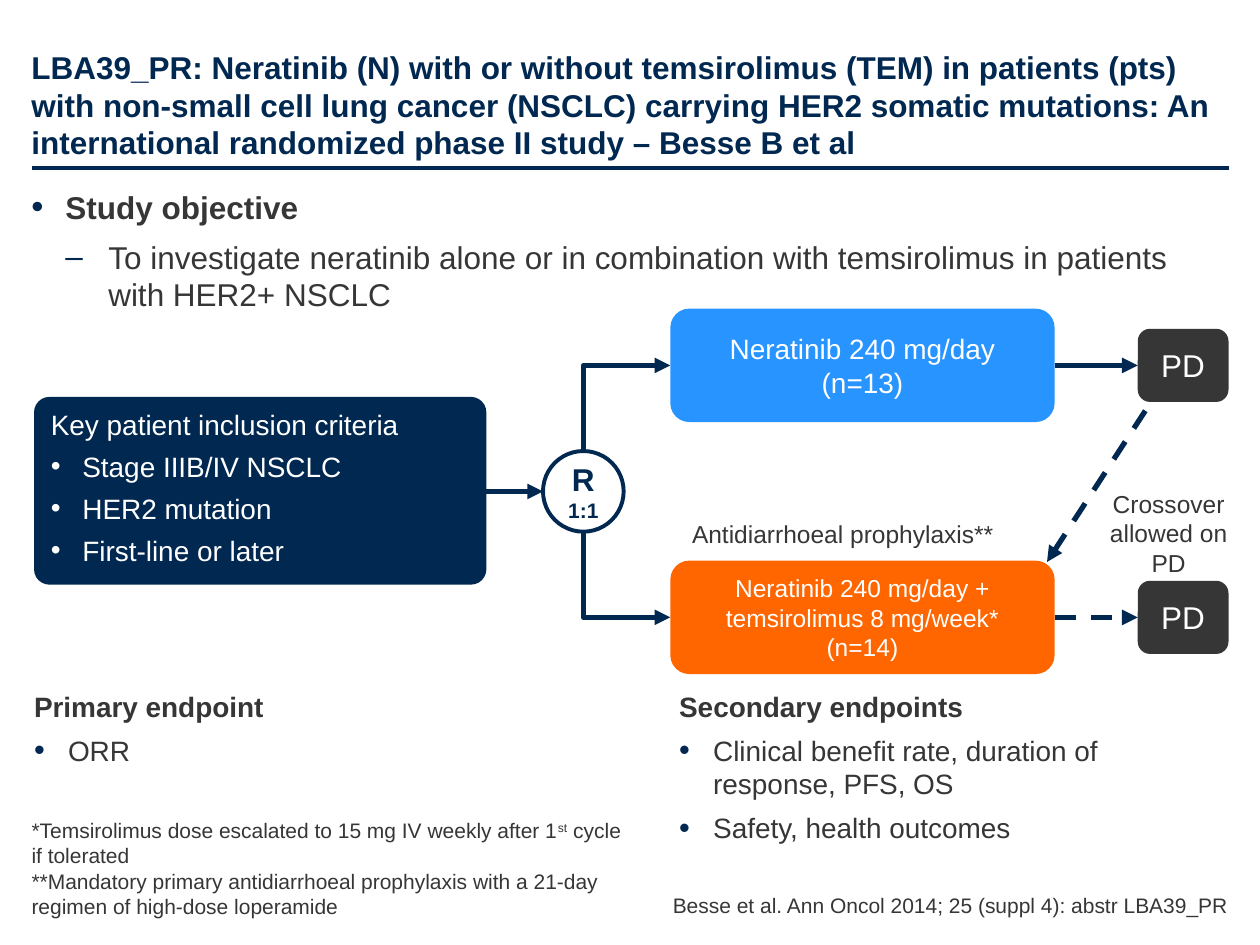
from dataclasses import dataclass

import lxml.etree
import pptx
import pptx.dml.color
import pptx.enum.dml
import pptx.enum.shapes
import pptx.enum.text
import pptx.oxml.ns
import pptx.util

Inches = pptx.util.Inches
Pt = pptx.util.Pt
qn = pptx.oxml.ns.qn
Align = pptx.enum.text.PP_ALIGN
Anchor = pptx.enum.text.MSO_ANCHOR
Shape = pptx.enum.shapes.MSO_SHAPE
Link = pptx.enum.shapes.MSO_CONNECTOR

COLORS = {"navy": "002850", "gray": "363636", "blue": "2894FF",
          "orange": "FF6600", "white": "FFFFFF"}
PAD = (0.1, 0.05, 0.1, 0.05)
FLAT = (0, 0.05, 0, 0.05)
SIDES = (0.1, 0, 0.1, 0)
NONE = (0, 0, 0, 0)


@dataclass
class Para:
    text: str
    size: float
    color: str = "gray"
    bold: bool = False
    align: Align = Align.LEFT
    after: float = 0
    before: float = 0
    bullet: str = ""
    left: float = 0.27
    hang: float = 0.27
    mark: str = "navy"
    scale: int = 100


@dataclass
class Card:
    at: tuple[float, float, float, float]
    fill: str
    paras: list[Para]
    adj: float = 0.167
    pad: tuple[float, float, float, float] = SIDES
    anchor: Anchor = Anchor.MIDDLE


@dataclass
class Arrow:
    start: tuple[float, float]
    end: tuple[float, float]
    dash: bool = False


def rgb(name: str) -> pptx.dml.color.RGBColor:
    return pptx.dml.color.RGBColor.from_string(COLORS[name])


def add_mark(par, item: Para) -> None:
    """Give a paragraph its bullet and hanging indent."""
    props = par._p.get_or_add_pPr()
    props.set("marL", str(Inches(item.left)))
    props.set("indent", str(-Inches(item.hang)))
    tint = lxml.etree.SubElement(props, qn("a:buClr"))
    lxml.etree.SubElement(tint, qn("a:srgbClr"), val=COLORS[item.mark])
    lxml.etree.SubElement(props, qn("a:buSzPct"), val=str(item.scale * 1000))
    lxml.etree.SubElement(props, qn("a:buFont"), typeface="Arial")
    lxml.etree.SubElement(props, qn("a:buChar"), char=item.bullet)


def write(shape, paras: list[Para], pad=PAD, anchor=Anchor.TOP, wrap=True) -> None:
    """Fill a shape with text; a part between carets is superscript."""
    frame = shape.text_frame
    frame.word_wrap = wrap
    frame.vertical_anchor = anchor
    (frame.margin_left, frame.margin_top,
     frame.margin_right, frame.margin_bottom) = map(Inches, pad)
    for i, item in enumerate(paras):
        par = frame.add_paragraph() if i else frame.paragraphs[0]
        par.alignment = item.align
        par.space_before = Pt(item.before)
        par.space_after = Pt(item.after)
        if item.bullet:
            add_mark(par, item)
        par.font.name = "Arial"
        par.font.size = Pt(item.size)
        par.font.bold = item.bold
        par.font.color.rgb = rgb(item.color)
        for j, part in enumerate(item.text.split("^")):
            run = par.add_run()
            run.text = part
            if j % 2:
                run.font._element.set("baseline", "30000")


def add_text(slide, at, paras: list[Para], pad=PAD, anchor=Anchor.TOP, wrap=True) -> None:
    write(slide.shapes.add_textbox(*map(Inches, at)), paras, pad, anchor, wrap)


def add_card(slide, card: Card) -> None:
    shape = slide.shapes.add_shape(Shape.ROUNDED_RECTANGLE, *map(Inches, card.at))
    shape.shadow.inherit = False
    shape.adjustments[0] = card.adj
    shape.fill.solid()
    shape.fill.fore_color.rgb = rgb(card.fill)
    shape.line.fill.background()
    write(shape, card.paras, card.pad, card.anchor)


def add_line(slide, start, end, width: float = 3, kind=Link.STRAIGHT):
    line = slide.shapes.add_connector(kind, *map(Inches, (*start, *end)))
    line.line.color.rgb = rgb("navy")
    line.line.width = Pt(width)
    lxml.etree.SubElement(line._element.spPr, qn("a:effectLst"))
    return line


def add_tip(line, end: str) -> None:
    lxml.etree.SubElement(line.line._get_or_add_ln(), qn(end), type="triangle")


def add_arrow(slide, arrow: Arrow) -> None:
    line = add_line(slide, arrow.start, arrow.end)
    if arrow.dash:
        line.line.dash_style = pptx.enum.dml.MSO_LINE.DASH
    add_tip(line, "a:tailEnd")


def add_elbow(slide, tip, base) -> None:
    """Draw one right-angle bend, level at the tip and upright at the base."""
    line = add_line(slide, tip, base, kind=Link.ELBOW)
    line._element.spPr.find(qn("a:prstGeom")).set("prst", "bentConnector2")
    add_tip(line, "a:headEnd")


def center(text: str, size: float, color: str = "white", bold: bool = False) -> Para:
    return Para(text, size, color, bold, Align.CENTER)


def add_ends(slide, at, head: str, items: list[str]) -> None:
    """Add a list of endpoints under a bold heading."""
    paras = [Para(head, 16, bold=True, after=6)]
    paras += [Para(t, 16, after=6, bullet="•", scale=110) for t in items]
    add_text(slide, at, paras, FLAT)


def main() -> None:
    deck = pptx.Presentation()
    deck.slide_width, deck.slide_height = Inches(10), Inches(7.5)
    slide = deck.slides.add_slide(deck.slide_layouts[6])

    add_line(slide, (0.25, 1.33), (9.75, 1.33), 2.25)
    add_text(slide, (0.25, 0.25, 9.5, 1.03), [Para(
        "LBA39_PR: Neratinib (N) with or without temsirolimus (TEM) in patients (pts) "
        "with non-small cell lung cancer (NSCLC) carrying HER2 somatic mutations: An "
        "international randomized phase II study – Besse B et al", 18, "navy", True)],
        (0, 0.05, 0, 0), Anchor.BOTTOM)
    add_text(slide, (0.25, 1.44, 9.5, 1.1), [
        Para("Study objective", 18, bold=True, after=3, bullet="•", scale=110),
        Para("To investigate neratinib alone or in combination with temsirolimus in "
             "patients with HER2+ NSCLC", 18, after=3, before=4, bullet="–",
             left=0.61, hang=0.34)], FLAT)
    add_text(slide, (5.18, 7.08, 4.57, 0.2), [Para(
        "Besse et al. Ann Oncol 2014; 25 (suppl 4): abstr LBA39_PR", 12,
        align=Align.RIGHT)], NONE, Anchor.BOTTOM, False)
    add_ends(slide, (0.27, 5.42, 3.32, 0.92), "Primary endpoint", ["ORR"])
    add_ends(slide, (5.39, 5.42, 4.15, 0.92), "Secondary endpoints", [
        "Clinical benefit rate, duration of response, PFS, OS",
        "Safety, health outcomes"])

    ring = slide.shapes.add_shape(Shape.OVAL, *map(Inches, (4.31, 3.58, 0.64, 0.64)))
    ring.shadow.inherit = False
    ring.fill.background()
    ring.line.color.rgb = rgb("navy")
    ring.line.width = Pt(2.25)
    write(ring, [center("R", 18, "navy", True), center("1:1", 12, "navy", True)],
          anchor=Anchor.MIDDLE, wrap=False)

    top, low = 2.9, 4.9
    add_elbow(slide, (5.32, top), (4.63, 3.58))
    add_elbow(slide, (5.32, low), (4.63, 4.22))
    for arrow in (Arrow((2.34, 3.9), (4.31, 3.9)),
                  Arrow((8.37, low), (9.03, low), True),
                  Arrow((8.37, top), (9.03, top)),
                  Arrow((9.09, 3.26), (8.31, 4.46), True)):
        add_arrow(slide, arrow)

    rules = [Para("Key patient inclusion criteria", 16, "white", after=4.8)]
    rules += [Para(t, 16, "white", after=4.8, bullet="•", left=0.25, hang=0.25,
                   mark="white")
              for t in ("Stage IIIB/IV NSCLC", "HER2 mutation", "First-line or later")]
    cards = [Card((9.03, mid - 0.29, 0.72, 0.58), "gray", [center("PD", 18)])
             for mid in (low, top)]
    cards += [
        Card((0.27, 3.15, 3.59, 1.49), "navy", rules, 0.082, PAD, Anchor.TOP),
        Card((5.32, low - 0.45, 3.05, 0.9), "orange", [center(
            "Neratinib 240 mg/day + temsirolimus 8 mg/week* (n=14)", 14)]),
        Card((5.32, top - 0.45, 3.05, 0.9), "blue", [
            center("Neratinib 240 mg/day", 16), center("(n=13)", 16)])]
    for card in cards:
        add_card(slide, card)

    add_text(slide, (0.25, 6.48, 4.71, 0.81), [
        Para("*Temsirolimus dose escalated to 15 mg IV weekly after 1^st^ cycle "
             "if tolerated", 12),
        Para("**Mandatory primary antidiarrhoeal prophylaxis with a 21-day regimen "
             "of high-dose loperamide", 12)], NONE, Anchor.BOTTOM)
    add_text(slide, (8.55, 3.83, 1.45, 0.57),
             [center("Crossover allowed on PD", 14, "gray")])
    add_text(slide, (5.39, 4.07, 2.6, 0.34),
             [center("Antidiarrhoeal prophylaxis**", 14, "gray")])
    deck.save("out.pptx")


if __name__ == "__main__":
    main()
